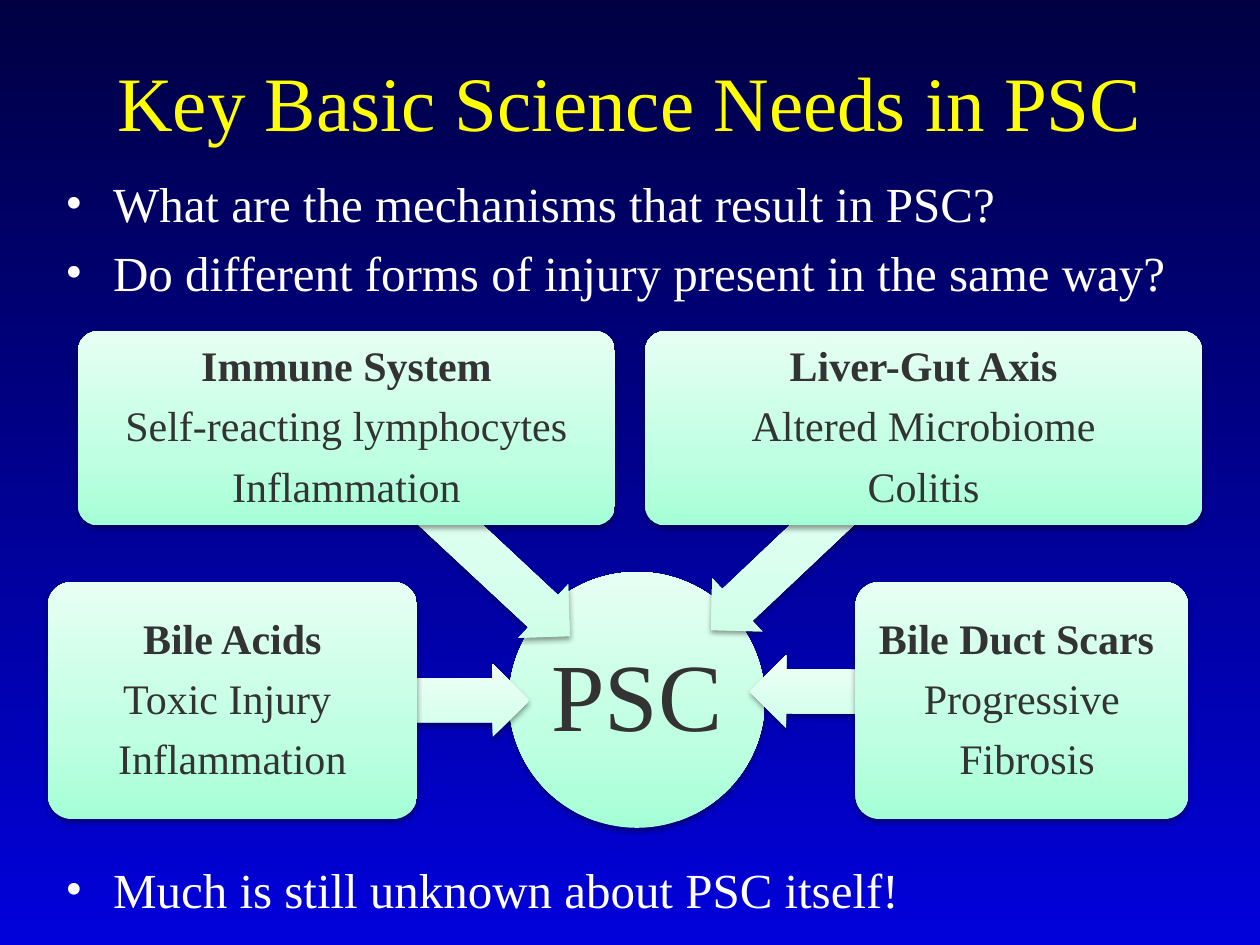
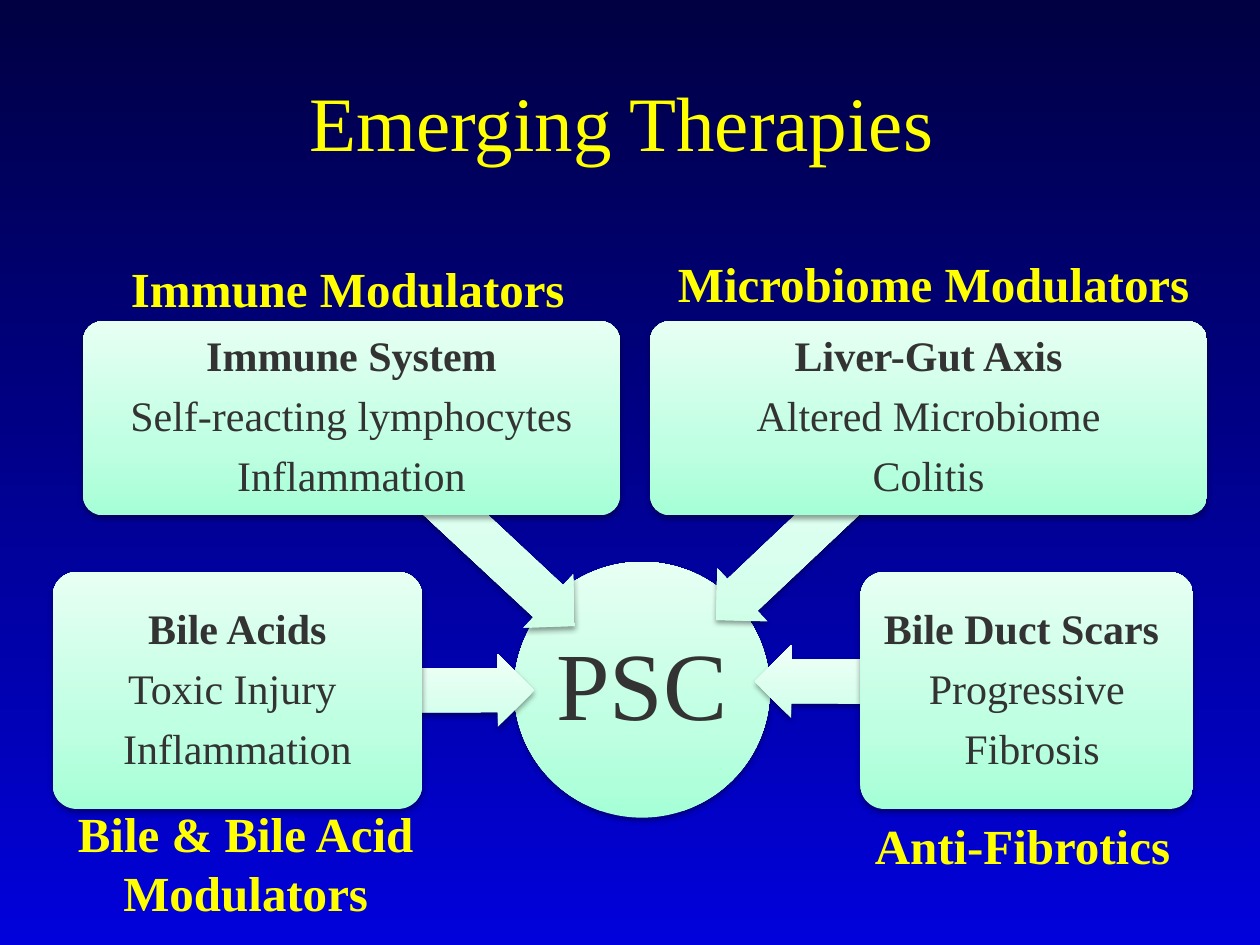
"""Build two slides on the basic science needs and emerging therapies in PSC."""
from copy import deepcopy
from dataclasses import dataclass
from typing import Any

from lxml.etree import SubElement
from pptx import Presentation
from pptx.dml.color import RGBColor
from pptx.enum.shapes import MSO_SHAPE
from pptx.enum.text import MSO_ANCHOR, PP_ALIGN
from pptx.oxml.ns import qn
from pptx.util import Pt

EMU_PER_PX = 9144
FONT_NAME = "Times New Roman"
YELLOW = RGBColor(0xFF, 0xFF, 0x00)
WHITE = RGBColor(0xFF, 0xFF, 0xFF)
CHARCOAL = RGBColor(0x33, 0x33, 0x33)
BLACK = RGBColor(0x00, 0x00, 0x00)
NIGHT_BLUE = RGBColor(0x00, 0x00, 0x42)
BRIGHT_BLUE = RGBColor(0x01, 0x01, 0xDB)
MINT_STOPS = (
    (0, RGBColor(0xA5, 0xFF, 0xD6)),
    (0.35, RGBColor(0xBF, 0xFF, 0xE2)),
    (1, RGBColor(0xE7, 0xFF, 0xF3)),
)
PALE_MINT_STOPS = (
    (0, RGBColor(0xCD, 0xFF, 0xE7)),
    (0.35, RGBColor(0xDA, 0xFF, 0xEE)),
    (1, RGBColor(0xF1, 0xFF, 0xF8)),
)
SHADOW = {"blurRad": "40000", "dist": "20000", "dir": "5400000", "rotWithShape": "0"}
TITLE_FONT = {"size": Pt(44), "color": YELLOW}
LABEL_FONT = {"size": Pt(28), "color": YELLOW, "bold": True}
BULLET_FONT = {"size": Pt(28), "color": WHITE}
HUB_FONT = {"size": Pt(55), "color": CHARCOAL}
FACTOR_FONT = {"size": Pt(24), "color": CHARCOAL}
HEADING_FONT = {**FACTOR_FONT, "bold": True}
CENTERED = {"alignment": PP_ALIGN.CENTER}
BULLETED = {"alignment": PP_ALIGN.JUSTIFY, "space_after": Pt(5.6)}
HUB_PARAGRAPH = {**CENTERED, "line_spacing": 0.9, "space_after": Pt(19.25)}
FACTOR_PARAGRAPH = {**CENTERED, "line_spacing": 0.9, "space_after": Pt(8.4)}


@dataclass(frozen=True)
class Box:
    """A rectangle in px."""

    left: int
    top: int
    width: int
    height: int

    def moved(self, right: int, down: int) -> "Box":
        """Return the same rectangle at an offset."""
        return Box(self.left + right, self.top + down, self.width, self.height)

    def emu(self) -> tuple[int, ...]:
        """Return left, top, width and height in EMU."""
        return tuple(px(side) for side in (self.left, self.top, self.width, self.height))


@dataclass(frozen=True)
class Factor:
    """A cause of PSC and the arrow that leads from it to the hub."""

    box: Box
    lines: tuple[str, ...]
    arrow: Box
    rotation: float


@dataclass(frozen=True)
class Label:
    """Free text at a place on the slide."""

    box: Box
    lines: tuple[str, ...]


HUB = Box(404, 454, 203, 203)
FACTORS = (
    Factor(Box(38, 462, 293, 188), ("Bile Acids", "Toxic Injury ", "Inflammation"),
           Box(156, 527, 264, 58), 179.9),
    Factor(Box(62, 263, 426, 154), ("Immune System", "Self-reacting lymphocytes", "Inflammation"),
           Box(209, 380, 281, 58), 223),
    Factor(Box(512, 263, 442, 154), ("Liver-Gut Axis", "Altered Microbiome", "Colitis"),
           Box(528, 380, 265, 58), 316.6),
    Factor(Box(679, 462, 264, 188), ("Bile Duct Scars ", "Progressive", " Fibrosis"),
           Box(595, 520, 193, 58), 0.1),
)
NEEDS_TITLE = Label(Box(75, 17, 850, 125), ("Key Basic Science Needs in PSC",))
THERAPIES_TITLE = Label(Box(2, 33, 983, 125), ("Emerging Therapies",))
QUESTIONS = (
    Label(Box(42, 133, 933, 110), (
        "What are the mechanisms that result in PSC?",
        "Do different forms of injury present in the same way?",
    )),
    Label(Box(42, 677, 933, 60), ("Much is still unknown about PSC itself!",)),
)
THERAPIES = (
    Label(Box(50, 633, 290, 104), ("Bile & Bile Acid", "Modulators")),
    Label(Box(92, 200, 368, 57), ("Immune Modulators",)),
    Label(Box(516, 196, 450, 57), ("Microbiome Modulators",)),
    Label(Box(683, 642, 257, 57), ("Anti-Fibrotics",)),
)


def px(length: int) -> int:
    """Turn px into EMU."""
    return length * EMU_PER_PX


def apply_format(target: Any, values: dict[str, Any]) -> None:
    """Set each attribute of a format on the target."""
    for name, value in values.items():
        if name == "color":
            target.color.rgb = value
        else:
            setattr(target, name, value)


def write_line(text_frame: Any, index: int, text: str, font: dict, layout: dict) -> Any:
    """Write one paragraph and return it."""
    paragraph = text_frame.paragraphs[0] if index == 0 else text_frame.add_paragraph()
    apply_format(paragraph, layout)
    run = paragraph.add_run()
    run.text = text
    apply_format(run.font, {"name": FONT_NAME, **font})
    return paragraph


def add_text(slide: Any, label: Label, font: dict, layout: dict, frame: dict) -> list:
    """Add a text box and return its paragraphs."""
    text_frame = slide.shapes.add_textbox(*label.box.emu()).text_frame
    apply_format(text_frame, frame)
    return [write_line(text_frame, index, line, font, layout)
            for index, line in enumerate(label.lines)]


def add_title(slide: Any, title: Label) -> None:
    """Add a slide title."""
    add_text(slide, title, TITLE_FONT, CENTERED,
             {"word_wrap": True, "vertical_anchor": MSO_ANCHOR.MIDDLE})


def add_bullets(slide: Any, label: Label) -> None:
    """Add a bulleted list with a hanging indent."""
    for paragraph in add_text(slide, label, BULLET_FONT, BULLETED, {"word_wrap": True}):
        properties = paragraph._p.get_or_add_pPr()
        properties.set("marL", str(px(38)))
        properties.set("indent", str(-px(38)))
        SubElement(properties, qn("a:buFont"), typeface=FONT_NAME)
        SubElement(properties, qn("a:buChar"), char="•")


def add_mint_shape(slide: Any, kind: MSO_SHAPE, box: Box, stops: tuple,
                   adjustments: tuple = ()) -> Any:
    """Add a shape with an upright gradient fill, a soft shadow and no outline."""
    shape = slide.shapes.add_shape(kind, *box.emu())
    for index, value in enumerate(adjustments):
        shape.adjustments[index] = value
    shape.line.fill.background()
    shape.fill.gradient()
    shape.fill.gradient_angle = 90
    properties = shape._element.spPr
    properties.find(qn("a:gradFill")).set("rotWithShape", "0")
    stop_list = properties.find(".//" + qn("a:gsLst"))
    stop_list.insert(1, deepcopy(stop_list[0]))
    for stop, (position, color) in zip(shape.fill.gradient_stops, stops):
        stop.position = position
        stop.color.rgb = color
    shape.shadow.inherit = False
    effects = properties.find(qn("a:effectLst"))
    shadow = SubElement(effects, qn("a:outerShdw"), SHADOW)
    color = SubElement(shadow, qn("a:srgbClr"), val=str(BLACK))
    SubElement(color, qn("a:alpha"), val="38000")
    return shape


def fill_text(shape: Any, lines: tuple[str, ...], fonts: tuple, layout: dict,
              word_wrap: bool = True) -> None:
    """Write centred lines inside a shape, one font to each line."""
    margins = {f"margin_{side}": px(5) for side in ("left", "top", "right", "bottom")}
    apply_format(shape.text_frame, {
        "word_wrap": word_wrap, "vertical_anchor": MSO_ANCHOR.MIDDLE, **margins})
    for index, (line, font) in enumerate(zip(lines, fonts)):
        write_line(shape.text_frame, index, line, font, layout)


def add_diagram(slide: Any, right: int = 0, down: int = 0) -> None:
    """Add the PSC hub with its four factors at an offset."""
    hub = add_mint_shape(slide, MSO_SHAPE.OVAL, HUB.moved(right, down), MINT_STOPS)
    fill_text(hub, ("PSC",), (HUB_FONT,), HUB_PARAGRAPH, word_wrap=False)
    for factor in FACTORS:
        arrow = add_mint_shape(slide, MSO_SHAPE.LEFT_ARROW, factor.arrow.moved(right, down),
                               PALE_MINT_STOPS, (0.6, 0.5))
        arrow.rotation = factor.rotation
        panel = add_mint_shape(slide, MSO_SHAPE.ROUNDED_RECTANGLE,
                               factor.box.moved(right, down), MINT_STOPS, (0.1,))
        fill_text(panel, factor.lines, (HEADING_FONT, FACTOR_FONT, FACTOR_FONT),
                  FACTOR_PARAGRAPH)


def add_blue_slide(presentation: Any) -> Any:
    """Add a blank slide with the blue gradient background."""
    slide = presentation.slides.add_slide(presentation.slide_layouts[6])
    fill = slide.background.fill
    fill.gradient()
    fill.gradient_angle = 270
    for stop, color in zip(fill.gradient_stops, (NIGHT_BLUE, BRIGHT_BLUE)):
        stop.color.rgb = color
    return slide


def main() -> None:
    """Build and save the presentation."""
    presentation = Presentation()
    presentation.slide_width, presentation.slide_height = px(1000), px(750)

    needs = add_blue_slide(presentation)
    for question in QUESTIONS:
        add_bullets(needs, question)
    add_diagram(needs)
    add_title(needs, NEEDS_TITLE)

    therapies = add_blue_slide(presentation)
    add_diagram(therapies, 4, -8)
    add_title(therapies, THERAPIES_TITLE)
    for therapy in THERAPIES:
        add_text(therapies, therapy, LABEL_FONT, CENTERED, {"word_wrap": False})

    presentation.save("out.pptx")


if __name__ == "__main__":
    main()
